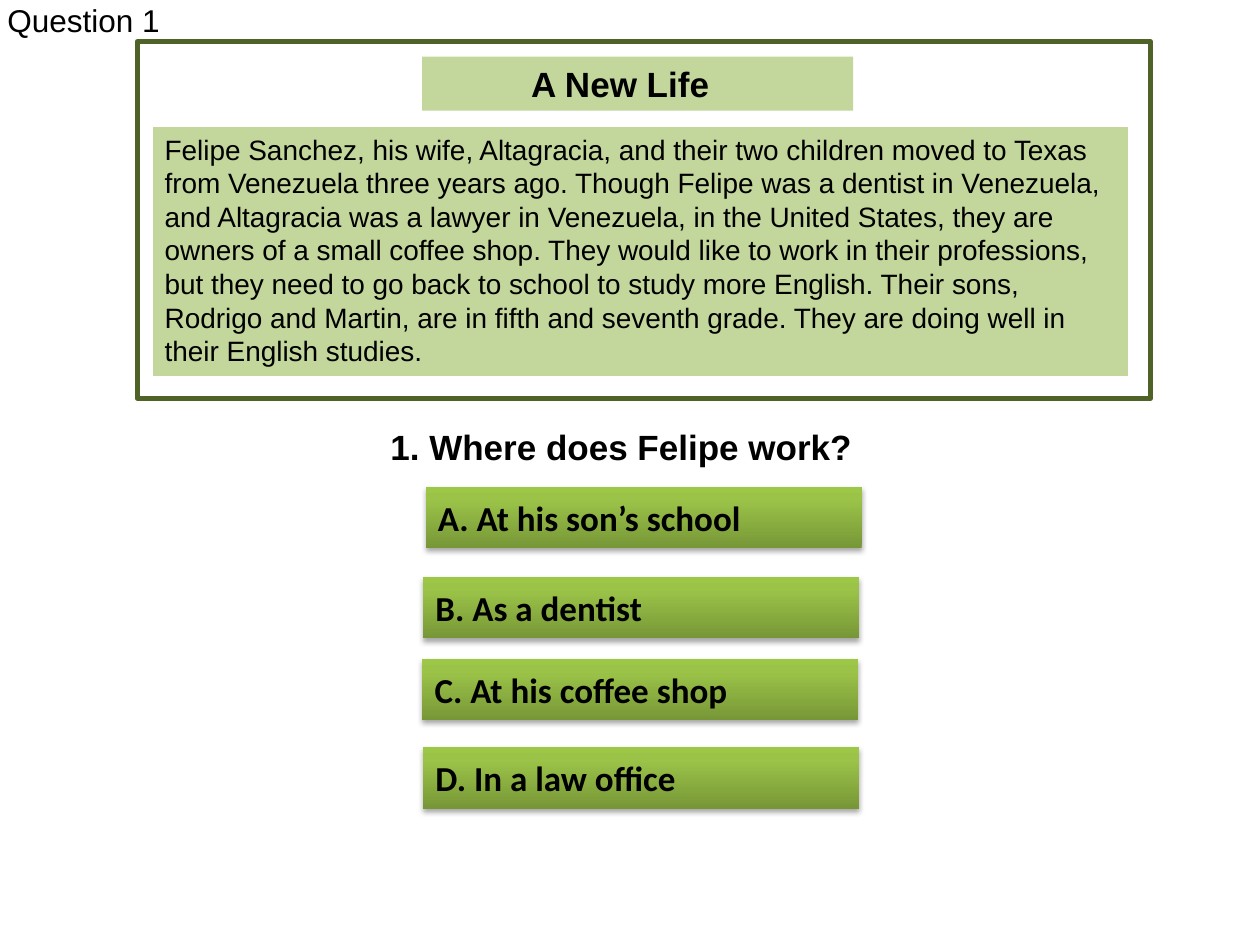
"""Build a reading quiz slide with a passage, a question and four answers."""
from dataclasses import dataclass
from typing import Any, Optional

from lxml import etree
from pptx import Presentation
from pptx import util as u
from pptx.dml import color
from pptx.enum import shapes, text
from pptx.oxml import ns

STORY = (
    "Felipe Sanchez, his wife, Altagracia, and their two children moved to Texas "
    "from Venezuela three years ago. Though Felipe was a dentist in Venezuela, "
    "and Altagracia was a lawyer in Venezuela, in the United States, they are "
    "owners of a small coffee shop. They would like to work in their professions, "
    "but they need to go back to school to study more English. Their sons, "
    "Rodrigo and Martin, are in fifth and seventh grade. They are doing well in "
    "their English studies."
)
STOPS = ((0, "779737"), (80, "9BC348"), (100, "9DC746"))


@dataclass
class Box:
    left: float
    top: float
    width: float
    height: float


@dataclass
class Panel:
    box: Box
    fill: str
    edge: Optional[str] = None
    weight: float = 0.75


@dataclass
class Answer:
    label: str
    left: float
    top: float


ANSWERS = (
    Answer("A. At his son’s school", 8.58, 9.81),
    Answer("B. As a dentist", 8.53, 11.63),
    Answer("C. At his coffee shop", 8.51, 13.28),
    Answer("D. In a law office", 8.53, 15.06),
)


def rgb(code: str) -> color.RGBColor:
    return color.RGBColor.from_string(code)


def place(box: Box) -> tuple:
    return tuple(u.Cm(n) for n in (box.left, box.top, box.width, box.height))


def write(shape: Any, words: str, size: int, font: str = "Arial",
          bold: bool = False, wrap: bool = True, inset: float = 0.25,
          anchor: Any = text.MSO_ANCHOR.TOP) -> None:
    frame = shape.text_frame
    frame.text = words
    frame.word_wrap = wrap
    frame.auto_size = text.MSO_AUTO_SIZE.NONE
    frame.vertical_anchor = anchor
    frame.margin_left = u.Cm(inset)
    para = frame.paragraphs[0]
    para.alignment = text.PP_ALIGN.LEFT
    face = para.runs[0].font
    face.name, face.size, face.bold = font, u.Pt(size), bold
    face.color.rgb = rgb("000000")


def draw_panel(slide: Any, panel: Panel) -> Any:
    shape = slide.shapes.add_shape(shapes.MSO_SHAPE.RECTANGLE, *place(panel.box))
    shape.shadow.inherit = False
    shape.fill.solid()
    shape.fill.fore_color.rgb = rgb(panel.fill)
    if panel.edge:
        shape.line.color.rgb = rgb(panel.edge)
        shape.line.width = u.Pt(panel.weight)
    else:
        shape.line.fill.background()
    return shape


def tint(shape: Any) -> None:
    shape.fill.gradient()
    shape.fill.gradient_angle = 90
    stops = shape._element.spPr.find(".//" + ns.qn("a:gsLst"))
    for old in list(stops):
        stops.remove(old)
    for spot, code in STOPS:
        stop = etree.SubElement(stops, ns.qn("a:gs"), pos=str(spot * 1000))
        etree.SubElement(stop, ns.qn("a:srgbClr"), val=code)


def shade(shape: Any) -> None:
    shape.shadow.inherit = False
    effects = shape._element.spPr.find(ns.qn("a:effectLst"))
    outer = etree.SubElement(effects, ns.qn("a:outerShdw"), blurRad="40000",
                             dist="23000", dir="5400000", rotWithShape="0")
    tone = etree.SubElement(outer, ns.qn("a:srgbClr"), val="000000")
    etree.SubElement(tone, ns.qn("a:alpha"), val="35000")


def draw_answer(slide: Any, answer: Answer) -> None:
    box = Box(answer.left, answer.top, 8.79, 1.24)
    shape = slide.shapes.add_shape(
        shapes.MSO_SHAPE.ACTION_BUTTON_CUSTOM, *place(box))
    tint(shape)
    shape.line.fill.background()
    shade(shape)
    write(shape, answer.label, 20, "Calibri", bold=True,
          anchor=text.MSO_ANCHOR.MIDDLE)


def main() -> None:
    deck = Presentation()
    deck.slide_width, deck.slide_height = u.Cm(25.4), u.Cm(19.05)
    slide = deck.slides.add_slide(deck.slide_layouts[5])

    title = slide.shapes.title
    title.left, title.top, title.width, title.height = place(
        Box(-0.1, -0.1, 4.65, 1.02))
    write(title, "Question 1", 18)

    draw_panel(slide, Panel(Box(2.77, 0.84, 20.42, 7.19), "FFFFFF", "4F6228", 3))
    head = draw_panel(slide, Panel(Box(8.51, 1.14, 8.69, 1.09), "C3D69B"))
    write(head, "A New Life", 20, bold=True, inset=2.2)
    story = draw_panel(
        slide, Panel(Box(3.07, 2.54, 19.69, 5.05), "C3D69B", "FFFFFF"))
    write(story, STORY, 16)

    query = slide.shapes.add_textbox(*place(Box(7.62, 8.46, 9.88, 1.12)))
    write(query, "1. Where does Felipe work?", 20, bold=True, wrap=False)
    for answer in ANSWERS:
        draw_answer(slide, answer)
    deck.save("out.pptx")


if __name__ == "__main__":
    main()
